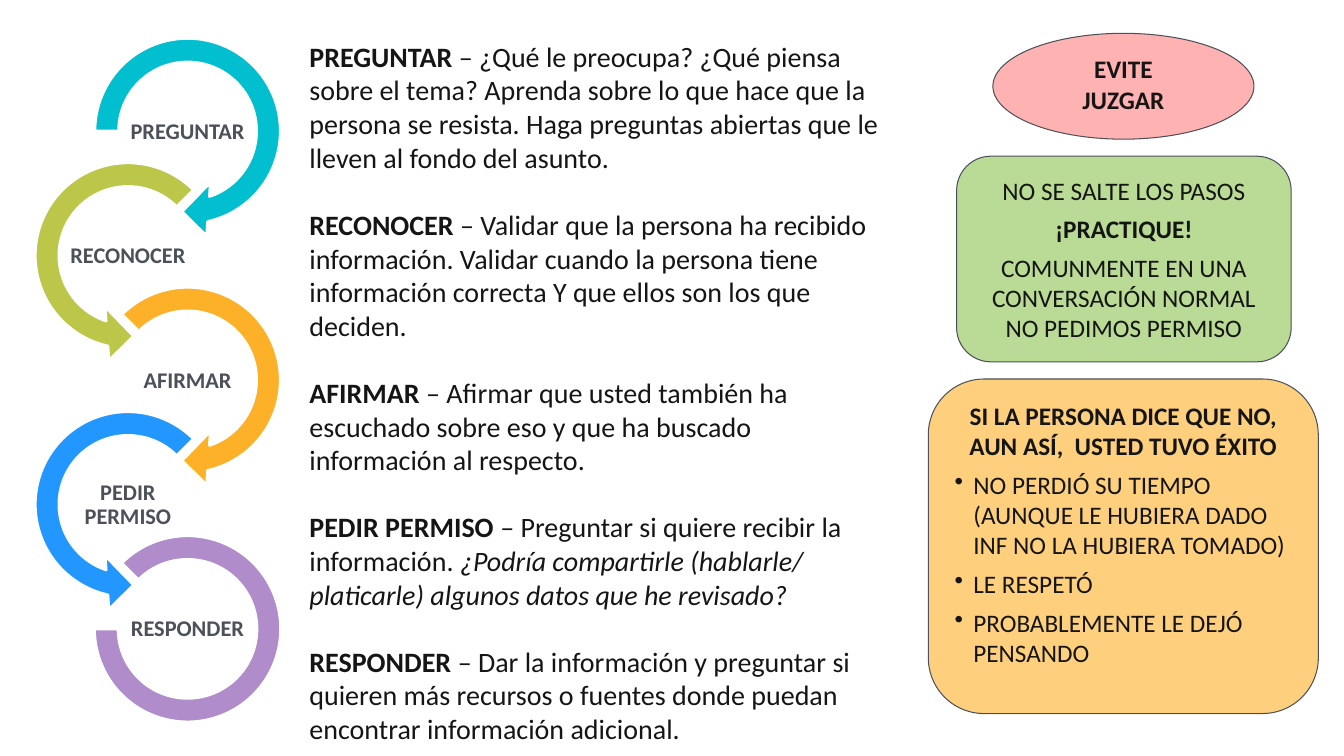
import pptx
import pptx.util
import pptx.dml.color
import pptx.enum.shapes
import pptx.enum.text
import pptx.oxml

Pt = pptx.util.Pt
Shape = pptx.enum.shapes.MSO_SHAPE
Align = pptx.enum.text.PP_ALIGN
Anchor = pptx.enum.text.MSO_ANCHOR
space = 'xmlns:a="http://schemas.openxmlformats.org/drawingml/2006/main"'


def paint(shape, fill, line, width, alpha=100):
    shape.shadow.inherit = False
    shape.fill.solid()
    shape.fill.fore_color.rgb = pptx.dml.color.RGBColor.from_string(fill)
    shape.line.color.rgb = pptx.dml.color.RGBColor.from_string(line)
    shape.line.width = Pt(width)
    if alpha < 100:
        tone = shape.fill._xPr.find(".//" + pptx.oxml.ns.qn("a:srgbClr"))
        tone.append(pptx.oxml.parse_xml(f'<a:alpha {space} val="{alpha * 1000}"/>'))


def style(para, size, color, bold=None, align=Align.LEFT, mark=None, indent=0):
    para.alignment = align
    if mark:
        props = para._p.get_or_add_pPr()
        props.set("marL", str(Pt(indent)))
        props.set("indent", str(-Pt(indent)))
        props.append(pptx.oxml.parse_xml(f"<a:{mark} {space}/>" if mark == "buNone"
                                         else f'<a:buChar {space} char="{mark}"/>'))
    para.font.name = "Calibri"
    para.font.size = Pt(size)
    para.font.bold = bold
    para.font.color.rgb = pptx.dml.color.RGBColor.from_string(color)


deck = pptx.Presentation()
deck.slide_width, deck.slide_height = Pt(960), Pt(540)
slide = deck.slides.add_slide(deck.slide_layouts[1])
title = slide.shapes.title
title._element.getparent().remove(title._element)

right, left = Shape.CIRCULAR_ARROW, Shape.LEFT_CIRCULAR_ARROW
steps = [
    ("PREGUNTAR", right, "02BFD0", 100, (0.11, 11.42, 45, 108, 0.125)),
    ("RECONOCER", left, "BCC649", 100, (0.11, 11.42, 63, 189, 0.125)),
    ("AFIRMAR", right, "FDB128", 100, (0.11, 11.42, 45, 135, 0.125)),
    ("PEDIR PERMISO", left, "2297FF", 100, (0.11, 11.42, 63, 189, 0.125)),
    ("RESPONDER", Shape.BLOCK_ARC, "7030A0", 55, (135, 108, 0.127)),
]
for row, (name, kind, color, alpha, values) in enumerate(steps):
    x = 14.4 if row % 2 else 57
    y = 16.6 + 88.9 * row
    inset = 10.5 if kind == Shape.BLOCK_ARC else 0
    side = 154 - 2 * inset
    ring = slide.shapes.add_shape(kind, Pt(x + inset), Pt(y + inset), Pt(side), Pt(side))
    for index, value in enumerate(values):
        ring.adjustments[index] = value
    paint(ring, color, "FFFFFF", 2, alpha)
    label = slide.shapes.add_textbox(Pt(x + 33.8), Pt(y + 56), Pt(86.4), Pt(43.2))
    frame = label.text_frame
    frame.word_wrap = True
    frame.vertical_anchor = Anchor.MIDDLE
    frame.margin_left = frame.margin_right = Pt(0.7)
    frame.margin_top = frame.margin_bottom = Pt(0.7)
    para = frame.paragraphs[0]
    para.text = name
    para.line_spacing = 0.9
    style(para, 16, "4C5059", True, Align.CENTER)

body = slide.placeholders[1]
body.left, body.top, body.width, body.height = Pt(213.8), Pt(24.5), Pt(422.6), Pt(516)
frame = body.text_frame
frame.auto_size = pptx.enum.text.MSO_AUTO_SIZE.NONE
frame.vertical_anchor = Anchor.TOP
notes = [
    "– ¿Qué le preocupa? ¿Qué piensa sobre el tema? Aprenda sobre lo que hace que la "
    "persona se resista. Haga preguntas abiertas que le lleven al fondo del asunto.",
    "– Validar que la persona ha recibido información. Validar cuando la persona tiene "
    "información correcta Y que ellos son los que deciden.",
    "– Afirmar que usted también ha escuchado sobre eso y que ha buscado información al respecto.",
    "– Preguntar si quiere recibir la información. ",
    "– Dar la información y preguntar si quieren más recursos o fuentes donde puedan "
    "encontrar información adicional.",
]
quote = "¿Podría compartirle (hablarle/ platicarle) algunos datos que he revisado?"
for row, (step, note) in enumerate(zip(steps, notes)):
    para = frame.add_paragraph() if row else frame.paragraphs[0]
    para.space_before = Pt(24 if row else 0)
    style(para, 20, "151515", mark="buNone")
    head = para.add_run()
    head.text = step[0] + " "
    head.font.bold = True
    para.add_run().text = note
    if step[0] == "PEDIR PERMISO":
        speech = para.add_run()
        speech.text = quote
        speech.font.italic = True

cards = [
    (Shape.ROUNDED_RECTANGLE, (683.3, 111.6, 239, 146.9), "B9DB95", 100, Anchor.MIDDLE, 6, [
        ("NO SE SALTE LOS PASOS", False, None),
        ("¡PRACTIQUE!", True, None),
        ("COMUNMENTE EN UNA CONVERSACIÓN NORMAL NO PEDIMOS PERMISO", False, None)]),
    (Shape.OVAL, (709.2, 23.8, 186.5, 75.6), "FF0000", 30, Anchor.TOP, 0, [
        ("EVITE", True, None),
        ("JUZGAR", True, None)]),
    (Shape.ROUNDED_RECTANGLE, (663.1, 270.7, 278.6, 239), "FED07E", 100, Anchor.TOP, 6, [
        ("SI LA PERSONA DICE QUE NO, AUN ASÍ,  USTED TUVO ÉXITO", True, None),
        ("NO PERDIÓ SU TIEMPO (AUNQUE LE HUBIERA DADO INF NO LA HUBIERA TOMADO)", False, "•"),
        ("LE RESPETÓ", False, "•"),
        ("PROBABLEMENTE LE DEJÓ PENSANDO", False, "•")]),
]
for kind, box, color, alpha, anchor, gap, lines in cards:
    card = slide.shapes.add_shape(kind, *map(Pt, box))
    paint(card, color, "4C5059", 0.75, alpha)
    frame = card.text_frame
    frame.word_wrap = True
    frame.vertical_anchor = anchor
    for row, (text, bold, mark) in enumerate(lines):
        para = frame.add_paragraph() if row else frame.paragraphs[0]
        para.text = text
        para.space_after = Pt(gap)
        style(para, 18, "151515", bold, Align.LEFT if mark else Align.CENTER, mark, 13.5)

deck.save("out.pptx")
